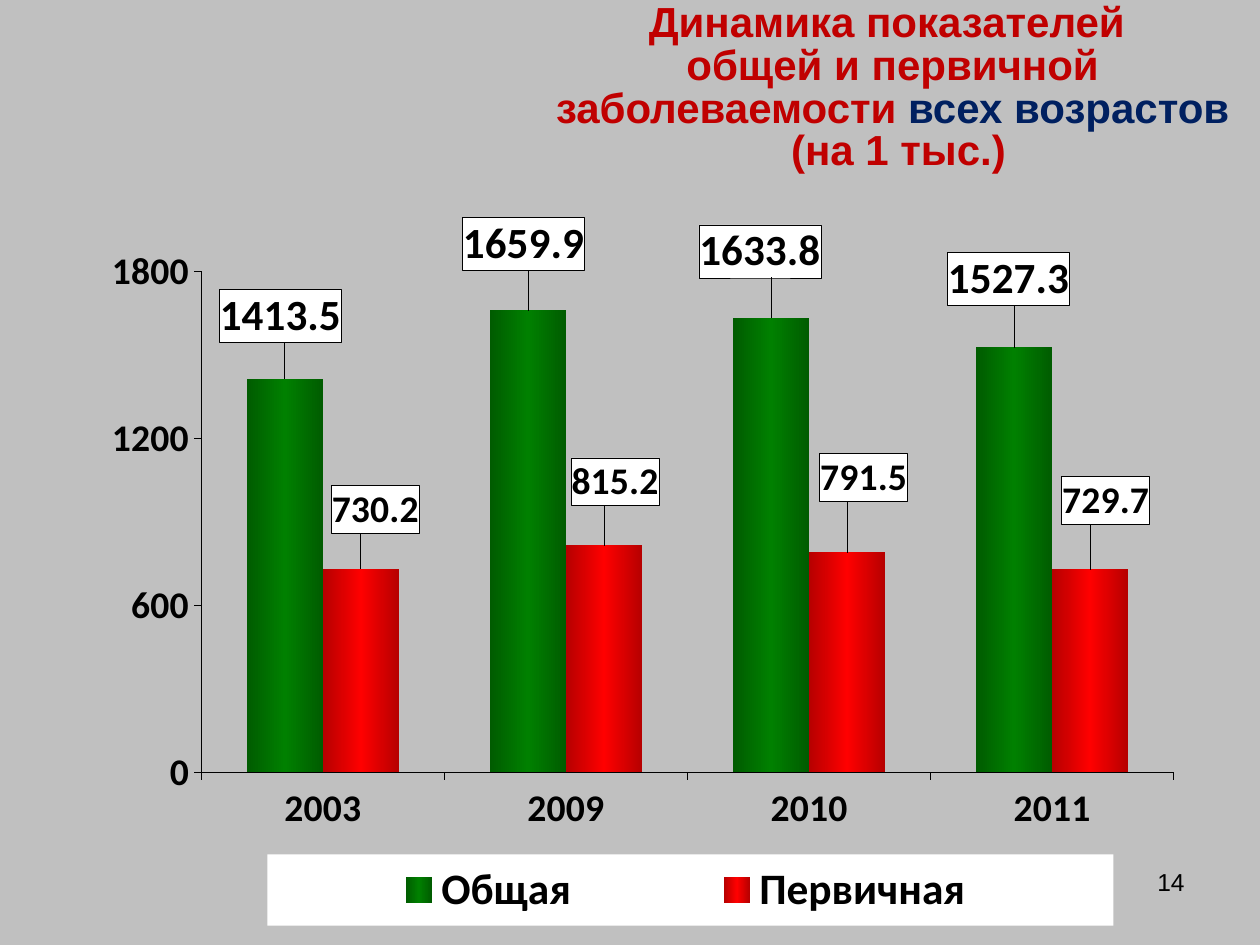
import pptx
import pptx.util
import pptx.chart.data
import pptx.dml.color
import pptx.enum.chart
import pptx.enum.text
import pptx.oxml
import pptx.oxml.ns

Inches, Pt = pptx.util.Inches, pptx.util.Pt
enums = pptx.enum.chart

# Content; None marks a line break
TITLE = [
    ("Динамика показателей ", "red"), None,
    ("общей и первичной заболеваемости ", "red"),
    ("всех возрастов", "navy"), None,
    (" (на 1 тыс.)", "red"),
]
PAGE = [("14", "black")]
YEARS = ["2003", "2009", "2010", "2011"]
# Shifts move each label from its usual place, as parts of the chart size
SERIES = [
    dict(name="Общая", vals=[1413.5, 1659.9, 1633.8, 1527.3],
         grad=("005C00", "008000"), size=24.6,
         shifts=[(-0.004, -0.043), (-0.004, -0.047),
                 (-0.01, -0.047), (-0.005, -0.05)]),
    dict(name="Первичная ", vals=[730.2, 815.2, 791.5, 729.7],
         grad=("B60000", "FF0000"), size=21.5,
         shifts=[(0.013, -0.042), (0.01, -0.047),
                 (0.015, -0.062), (0.014, -0.054)]),
]
THEME = dict(
    back="C0C0C0", red="C00000", navy="002060", black="000000", white="FFFFFF",
    face="Arial", chart="Calibri", title=24, page=14, axis=21.5, legend=24.8,
)


def paint(name):
    return pptx.dml.color.RGBColor.from_string(THEME[name])


def style(font, face, size, color="black", bold=True):
    font.name, font.size, font.bold = THEME[face], Pt(size), bold
    font.color.rgb = paint(color)


def make(xml):
    """Parse a piece of chart XML."""
    spaces = pptx.oxml.ns.nsdecls("c", "a")
    return pptx.oxml.parse_xml(xml.replace(">", f" {spaces}>", 1))


def layout(x, y, w=None, h=None, inner=False):
    parts = '<c:layoutTarget val="inner"/>' if inner else ""
    if w:
        parts += '<c:xMode val="edge"/><c:yMode val="edge"/>'
    for key, val in zip("xywh", (x, y, w, h)):
        if val is not None:
            parts += f'<c:{key} val="{val}"/>'
    return make(f"<c:layout><c:manualLayout>{parts}</c:manualLayout></c:layout>")


def box_look(line):
    edge = f'<a:solidFill><a:srgbClr val="{THEME["black"]}"/></a:solidFill>'
    return make(
        f'<c:spPr><a:solidFill><a:srgbClr val="{THEME["white"]}"/></a:solidFill>'
        f'<a:ln w="4318">{edge if line else "<a:noFill/>"}</a:ln></c:spPr>')


def drop_old(node):
    for old in node.findall(pptx.oxml.ns.qn("c:layout")):
        node.remove(old)


def add_text(slide, place, runs, size, align, anchor, bold, space=1.0):
    frame = slide.shapes.add_textbox(*map(Inches, place)).text_frame
    frame.word_wrap = True
    frame.vertical_anchor = anchor
    para = frame.paragraphs[0]
    para.alignment, para.line_spacing = align, space
    for item in runs:
        if item is None:
            para.add_line_break()
            continue
        run = para.add_run()
        run.text = item[0]
        style(run.font, "face", size, item[1], bold)


def add_chart(slide):
    data = pptx.chart.data.CategoryChartData()
    data.categories = YEARS
    for row in SERIES:
        data.add_series(row["name"], row["vals"])
    chart = slide.shapes.add_chart(
        enums.XL_CHART_TYPE.COLUMN_CLUSTERED,
        *map(Inches, (0.49, 1.49, 8.87, 5.88)), data).chart
    chart.has_title = False
    style(chart.font, "chart", 24.6)

    # Plot
    plot = chart.plots[0]
    plot.gap_width, plot.overlap, plot.vary_by_categories = 120, 0, False
    area = chart._chartSpace.chart.plotArea
    drop_old(area)
    area.insert(0, layout(0.125, 0.113, 0.87, 0.676, inner=True))

    # Axes
    for axis in (chart.category_axis, chart.value_axis):
        axis.has_major_gridlines = False
        axis.major_tick_mark = enums.XL_TICK_MARK.OUTSIDE
        axis.format.line.color.rgb = paint("black")
        axis.format.line.width = Pt(0.34)
        style(axis.tick_labels.font, "chart", THEME["axis"])
    axis = chart.value_axis
    axis.minimum_scale, axis.maximum_scale, axis.major_unit = 0, 1800, 600

    # Legend
    chart.has_legend = True
    legend = chart.legend
    legend.position = enums.XL_LEGEND_POSITION.BOTTOM
    legend.include_in_layout = False
    style(legend.font, "chart", THEME["legend"])
    node = legend._element
    drop_old(node)
    node.find(pptx.oxml.ns.qn("c:legendPos")).addnext(
        layout(0.184, 0.9, 0.757, 0.096))
    node.find(pptx.oxml.ns.qn("c:overlay")).addnext(box_look(False))

    # Bars and their labels
    for row, bars in zip(SERIES, plot.series):
        dark, light = row["grad"]
        stops = "".join(
            f'<a:gs pos="{pos}"><a:srgbClr val="{tone}"/></a:gs>'
            for pos, tone in ((0, dark), (50000, light), (100000, dark)))
        bars._element.get_or_add_spPr().append(make(
            f'<a:gradFill rotWithShape="1"><a:gsLst>{stops}</a:gsLst>'
            '<a:lin ang="0" scaled="1"/></a:gradFill>'))
        bars.data_labels.show_value = True
        style(bars.data_labels.font, "chart", row["size"])
        for num, shift in enumerate(row["shifts"]):
            label = bars.points[num].data_label
            style(label.font, "chart", row["size"])
            label.position = enums.XL_LABEL_POSITION.OUTSIDE_END
            node = bars.data_labels._element.findall(
                pptx.oxml.ns.qn("c:dLbl"))[num]
            for old in node.findall(pptx.oxml.ns.qn("c:spPr")):
                node.remove(old)
            drop_old(node)
            node.insert(1, layout(*shift))
            node.insert(2, box_look(True))


def main():
    deck = pptx.Presentation()
    deck.slide_width, deck.slide_height = Inches(10), Inches(7.5)
    slide = deck.slides.add_slide(deck.slide_layouts[6])
    slide.background.fill.solid()
    slide.background.fill.fore_color.rgb = paint("back")

    align, anchor = pptx.enum.text.PP_ALIGN, pptx.enum.text.MSO_ANCHOR
    add_text(slide, (4.17, 0.08, 5.83, 1.25), TITLE, THEME["title"],
             align.CENTER, anchor.MIDDLE, True, 0.85)
    add_chart(slide)
    add_text(slide, (7.17, 6.83, 2.33, 0.52), PAGE, THEME["page"],
             align.RIGHT, anchor.TOP, False)
    deck.save("out.pptx")


if __name__ == "__main__":
    main()
